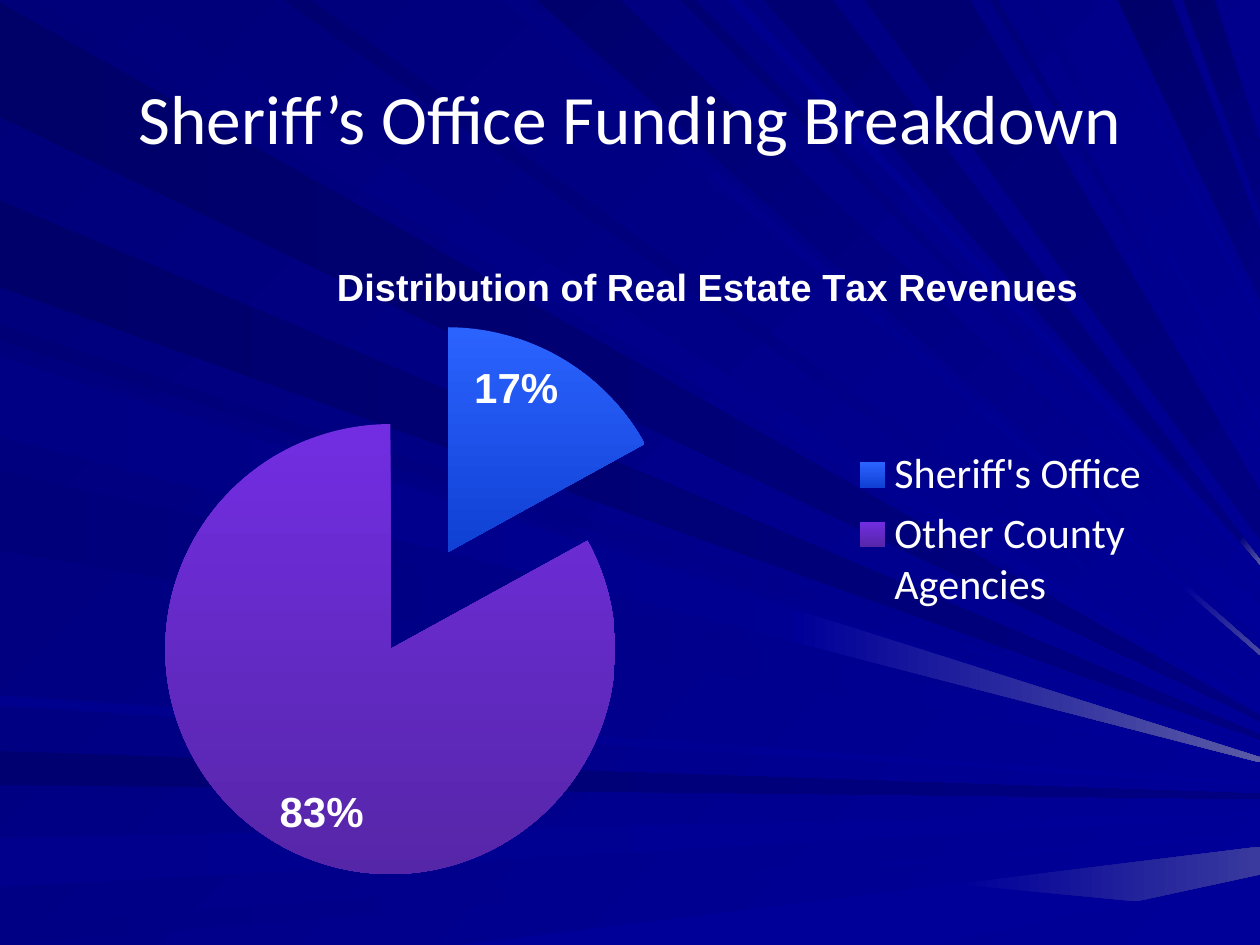
"""Build a slide with a funding pie chart over a background of light rays."""
from typing import NamedTuple

from pptx import Presentation
from pptx.chart.data import CategoryChartData
from pptx.dml.color import RGBColor
from pptx.dml.fill import FillFormat
from pptx.enum.chart import XL_CHART_TYPE as ChartType
from pptx.enum.chart import XL_LABEL_POSITION as LabelPosition
from pptx.enum.chart import XL_LEGEND_POSITION as LegendPosition
from pptx.enum.text import MSO_ANCHOR as Anchor
from pptx.enum.text import PP_ALIGN as Align
from pptx.oxml import parse_xml
from pptx.oxml.ns import nsdecls
from pptx.slide import Slide
from pptx.text.text import Font
from pptx.util import Pt

GRID = 72
RIGHT, BOTTOM = 10, 7.5
WHITE = "FFFFFF"
NAVY, BLUE = "000080", "000099"
ANGLES = {"left": 0, "top": 45, "bottom": 0}

Corner = tuple[float, float]


class Ray(NamedTuple):
    """A beam from a stretch of one slide edge to the right edge, in grid units."""
    edge: str
    near: float
    far: float
    tip: float
    start: str
    end: str = BLUE
    spread: float = 0.04
    glow: str = ""
    glow_from: float = 1


class Slice(NamedTuple):
    """A pie slice with its share and its gradient from top to bottom."""
    name: str
    share: float
    top: str
    bottom: str


RAYS = [
    Ray("left", 0.02, 0.93, 5.7, "000069", NAVY),
    Ray("top", 0.26, 1.01, 5.63, "00007B"),
    Ray("left", 5.96, 6.23, 6.32, "000071", NAVY),
    Ray("left", 6.65, 7.04, 6.47, "00008C"),
    Ray("left", 7.35, 7.5, 6.62, "000085"),
    Ray("bottom", 3.64, 7.42, 6.83, BLUE, spread=0.22, glow="39399E", glow_from=0.62),
    Ray("left", 2.58, 2.7, 5.89, "000076"),
    Ray("left", 1.59, 2.28, 5.85, "00006B", NAVY),
    Ray("top", 3.98, 4.16, 5.18, "000083", glow="4A4AA1", glow_from=0.9),
    Ray("top", 4.26, 4.92, 4.93, "00006D", spread=0.28),
    Ray("top", 5.4, 5.52, 4.63, "000073"),
    Ray("top", 6.06, 6.61, 4.46, "000073", NAVY, glow="5A5AA6", glow_from=0.96),
    Ray("top", 8.87, 9.3, 2.1, "00006B", NAVY, spread=0.54),
    Ray("top", 9.39, 9.64, 1.4, "00006D", NAVY, spread=0.54),
    Ray("left", 2.78, 3.42, 6, "00007E"),
    Ray("left", 3.74, 4.37, 6.05, "00007B"),
    Ray("left", 5.52, 5.6, 6.22, "00008E"),
    Ray("top", 2.25, 2.47, 5.5, "000070"),
    Ray("top", 5.77, 5.88, 4.54, "00008E"),
    Ray("top", 6.86, 7.7, 4.09, "000073", NAVY, spread=0.38),
    Ray("top", 7.85, 7.92, 3.57, "000078"),
    Ray("top", 8.15, 8.24, 3.36, "000085"),
    Ray("top", 8.65, 8.72, 2.54, "00008A"),
    Ray("left", 2.83, 3.47, 6.03, "000085", glow="5A5AA6", glow_from=0.63),
]
SLICES = [
    Slice("Sheriff's Office", 0.17, "2B63FF", "1040D4"),
    Slice("Other County Agencies", 0.83, "722DE2", "5626A8"),
]


def color(value: str) -> RGBColor:
    return RGBColor.from_string(value)


def paint(fill: FillFormat, start: str, end: str, angle: int) -> None:
    if start == end:
        fill.solid()
        fill.fore_color.rgb = color(start)
        return
    fill.gradient()
    fill.gradient_angle = (360 - angle) % 360
    for stop, value in zip(fill.gradient_stops, (start, end)):
        stop.color.rgb = color(value)


def style(font: Font, name: str, size: float, bold: bool = False) -> None:
    font.name, font.size, font.bold = name, Pt(size), bold
    font.color.rgb = color(WHITE)


def between(start: Corner, end: Corner, fraction: float) -> Corner:
    return (start[0] + (end[0] - start[0]) * fraction,
            start[1] + (end[1] - start[1]) * fraction)


def draw_beam(group, corners: list[Corner], start: str, end: str, angle: int) -> None:
    points = [(Pt(x * GRID), Pt(y * GRID)) for x, y in corners]
    builder = group.shapes.build_freeform(*points[0])
    builder.add_line_segments(points[1:])
    shape = builder.convert_to_shape()
    shape.shadow.inherit = False
    shape.line.fill.background()
    paint(shape.fill, start, end, angle)


def draw_rays(slide: Slide) -> None:
    group = slide.shapes.add_group_shape()
    for ray in RAYS:
        level = BOTTOM if ray.edge == "bottom" else 0
        near, far = [(0, place) if ray.edge == "left" else (place, level)
                     for place in (ray.near, ray.far)]
        if ray.edge == "top":
            near, far = far, near
        upper, lower = [(RIGHT, ray.tip + side * ray.spread / 2) for side in (-1, 1)]
        angle = ANGLES[ray.edge]
        draw_beam(group, [near, upper, lower, far], ray.start, ray.end, angle)
        if ray.glow:
            inner = [between(near, upper, ray.glow_from), between(far, lower, ray.glow_from)]
            draw_beam(group, [inner[0], upper, lower, inner[1]], ray.end, ray.glow, angle)
    slide.shapes.element.insert(2, group.element)


def write_title(slide: Slide) -> None:
    title = slide.shapes.title
    title.left, title.top, title.width, title.height = Pt(36), Pt(21.6), Pt(648), Pt(90)
    title.text_frame.vertical_anchor = Anchor.MIDDLE
    paragraph = title.text_frame.paragraphs[0]
    paragraph.alignment = Align.CENTER
    run = paragraph.add_run()
    run.text = "Sheriff’s Office Funding Breakdown"
    style(run.font, "Calibri", 39.6)


def set_layout(element, position: int, target: str = "", **fractions: float) -> None:
    for layout in element.findall("{*}layout"):
        element.remove(layout)
    inner = f'<c:layoutTarget val="{target}"/>' if target else ""
    modes = "".join(f'<c:{axis}Mode val="edge"/>' for axis in "xy")
    values = "".join(f'<c:{name} val="{value}"/>' for name, value in fractions.items())
    element.insert(position, parse_xml(
        f'<c:layout {nsdecls("c")}><c:manualLayout>{inner}{modes}{values}</c:manualLayout></c:layout>'))


def draw_pie(slide: Slide) -> None:
    data = CategoryChartData(number_format="0%")
    data.categories = [part.name for part in SLICES]
    data.add_series("Series 1", [part.share for part in SLICES])
    chart = slide.shapes.add_chart(
        ChartType.PIE, Pt(54), Pt(102.24), Pt(612), Pt(401.76), data).chart
    style(chart.font, "Arial", 18)

    chart.has_title = True
    run = chart.chart_title.text_frame.paragraphs[0].add_run()
    run.text = "Distribution of Real Estate Tax Revenues"
    style(run.font, "Arial", 21.6, True)
    set_layout(chart.chart_title.element, 1, x=0.22, y=0.11)

    chart.has_legend = True
    chart.legend.position = LegendPosition.RIGHT
    chart.legend.include_in_layout = False
    style(chart.legend.font, "Calibri", 24)
    set_layout(chart.element.chart.plotArea, 0, "inner", x=0, y=0.2, w=0.606, h=0.8)

    plot = chart.plots[0]
    plot.vary_by_categories = True
    plot.has_data_labels = True
    labels = plot.data_labels
    labels.show_value, labels.show_percentage = True, False
    labels.number_format, labels.number_format_is_linked = "0%", False
    labels.position = LabelPosition.INSIDE_END
    style(labels.font, "Arial", 24, True)
    chart.element.xpath("//c:ser/c:tx")[0].addnext(
        parse_xml(f'<c:explosion {nsdecls("c")} val="25"/>'))
    for index, part in enumerate(SLICES):
        point = plot.series[0].points[index]
        paint(point.format.fill, part.top, part.bottom, 90)
        point.format.line.fill.background()


def main() -> None:
    presentation = Presentation()
    presentation.slide_width, presentation.slide_height = Pt(720), Pt(540)
    slide = presentation.slides.add_slide(presentation.slide_layouts[5])
    paint(slide.background.fill, "000078", BLUE, 45)
    draw_rays(slide)
    write_title(slide)
    draw_pie(slide)
    presentation.save("out.pptx")


if __name__ == "__main__":
    main()
